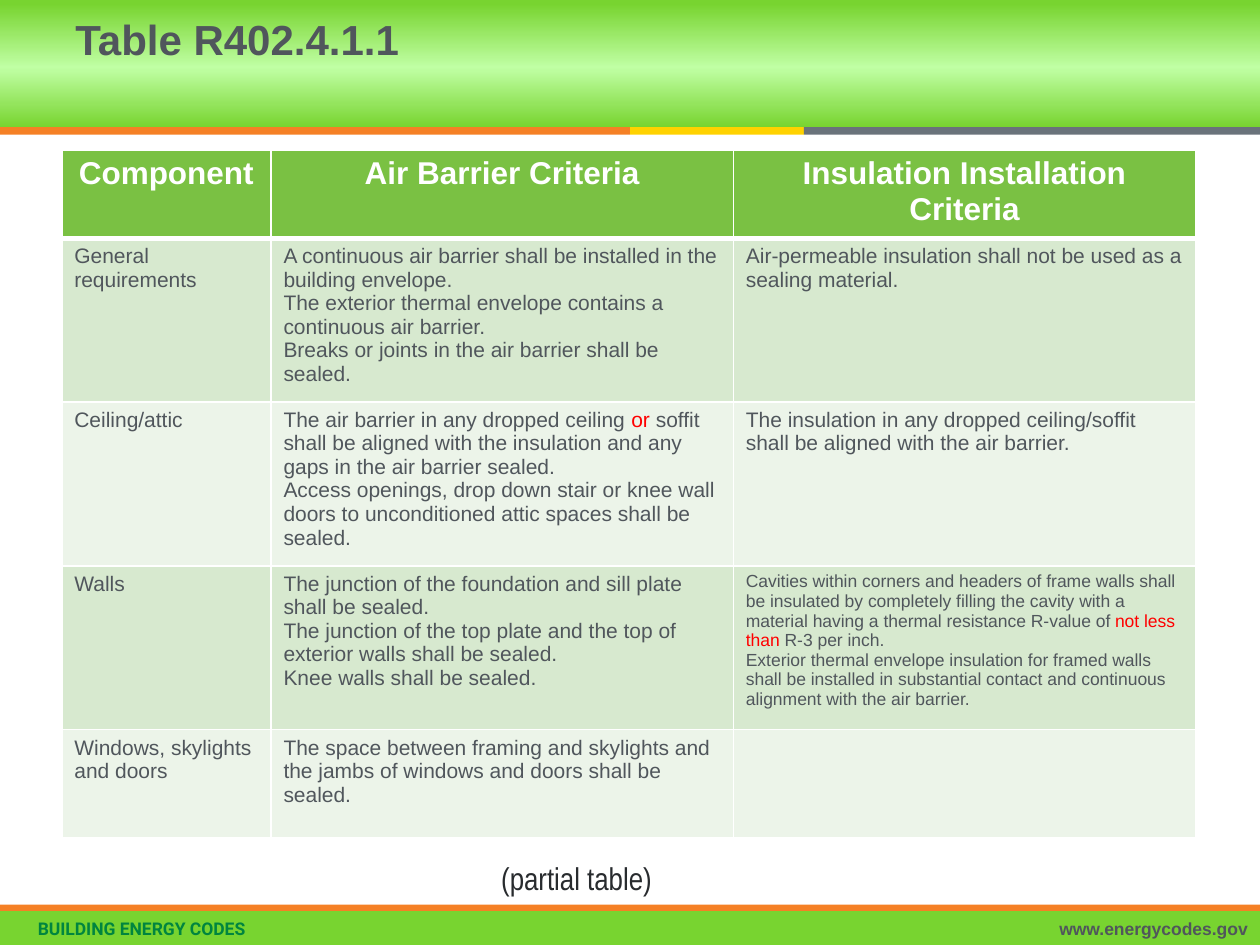
from lxml import etree
from pptx import Presentation
from pptx.dml.color import RGBColor
from pptx.enum.shapes import MSO_SHAPE
from pptx.enum.text import MSO_ANCHOR, PP_ALIGN
from pptx.oxml import parse_xml
from pptx.util import Inches, Pt

RECT = MSO_SHAPE.RECTANGLE
MIDDLE, TOP = MSO_ANCHOR.MIDDLE, MSO_ANCHOR.TOP
LEFT, CENTER, RIGHT = PP_ALIGN.LEFT, PP_ALIGN.CENTER, PP_ALIGN.RIGHT
NS = "http://schemas.openxmlformats.org/drawingml/2006/main"

COLORS = {
    "green": "78D430", "light_green": "C0FFA4", "orange": "F58025",
    "yellow": "FFD200", "gray": "6A737B", "text": "50565C",
    "brand": "00853F", "note": "282B2E", "red": "FF0000", "white": "FFFFFF",
    "header": "7AC143", "band": "D7E9CF", "pale": "ECF4E9",
}

# Each cell is a list of paragraphs; a paragraph is a list of (text, color) spans.
def plain(*lines):
    return [[(line, "text")] for line in lines]


HEADINGS = ["Component", "Air Barrier Criteria", "Insulation Installation Criteria"]
ROWS = [
    [plain("General requirements"),
     plain("A continuous air barrier shall be installed in the building envelope.",
           "The exterior thermal envelope contains a continuous air barrier.",
           "Breaks or joints in the air barrier shall be sealed."),
     plain("Air-permeable insulation shall not be used as a sealing material.")],
    [plain("Ceiling/attic"),
     [[("The air barrier in any dropped ceiling ", "text"), ("or ", "red"),
       ("soffit shall be aligned with the insulation and any gaps in the air "
        "barrier sealed.", "text")]]
     + plain("Access openings, drop down stair or knee wall doors to "
             "unconditioned attic spaces shall be sealed."),
     plain("The insulation in any dropped ceiling/soffit shall be aligned with "
           "the air barrier.")],
    [plain("Walls"),
     plain("The junction of the foundation and sill plate shall be sealed.",
           "The junction of the top plate and the top of exterior walls shall be sealed.",
           "Knee walls shall be sealed."),
     [[("Cavities within corners and headers of frame walls shall be insulated "
        "by completely filling the cavity with a material having a thermal "
        "resistance R-value of ", "text"), ("not less than", "red"),
       (" R-3 per inch.", "text")]]
     + plain("Exterior thermal envelope insulation for framed walls shall be "
             "installed in substantial contact and continuous alignment with "
             "the air barrier.")],
    [plain("Windows, skylights and doors"),
     plain("The space between framing and skylights and the jambs of windows "
           "and doors shall be sealed."),
     []],
]
COLUMN_WIDTHS = [1.66, 3.67, 3.67]
ROW_HEIGHTS = [0.7, 1.3, 1.3, 1.3, 0.86]
SMALL_CELL = (3, 2)


def rgb(name):
    return RGBColor.from_string(COLORS[name])


def add_span(para, text, size, color, font="Arial", bold=False):
    span = para.add_run()
    span.text = text
    span.font.size = Pt(size)
    span.font.name = font
    span.font.bold = bold
    span.font.color.rgb = rgb(color)


def add_bar(page, left, top, width, height, color):
    bar = page.shapes.add_shape(RECT, Inches(left), Inches(top),
                                Inches(width), Inches(height))
    bar.shadow.inherit = False
    bar.fill.solid()
    bar.fill.fore_color.rgb = rgb(color)
    bar.line.fill.background()
    return bar


def add_gradient(bar, stops):
    """Replace the solid fill with a top-to-bottom gradient."""
    stop_xml = "".join(
        f'<a:gs pos="{percent * 1000}"><a:srgbClr val="{COLORS[name]}"/></a:gs>'
        for percent, name in stops)
    gradient = parse_xml(f'<a:gradFill xmlns:a="{NS}" rotWithShape="1"><a:gsLst>{stop_xml}'
                         '</a:gsLst><a:lin ang="5400000" scaled="0"/></a:gradFill>')
    properties = bar.element.spPr
    properties.replace(properties.find(f"{{{NS}}}solidFill"), gradient)


def add_label(page, left, top, width, height, text, size, color, font="Arial",
              bold=False, align=LEFT, anchor=MIDDLE):
    box = page.shapes.add_textbox(Inches(left), Inches(top),
                                  Inches(width), Inches(height))
    frame = box.text_frame
    frame.word_wrap = True
    frame.vertical_anchor = anchor
    frame.paragraphs[0].alignment = align
    add_span(frame.paragraphs[0], text, size, color, font, bold)
    return frame


def set_borders(cell, top, bottom):
    """Draw white borders; top and bottom are widths in points."""
    properties = cell._tc.get_or_add_tcPr()
    sides = [("lnL", 1), ("lnR", 1), ("lnT", top), ("lnB", bottom)]
    for position, (side, width) in enumerate(sides):
        line = etree.Element(f"{{{NS}}}{side}", w=str(Pt(width)))
        fill = etree.SubElement(line, f"{{{NS}}}solidFill")
        etree.SubElement(fill, f"{{{NS}}}srgbClr", val=COLORS["white"])
        properties.insert(position, line)


def fill_cell(cell, paragraphs, fill, size, bold=False, align=LEFT):
    cell.fill.solid()
    cell.fill.fore_color.rgb = rgb(fill)
    frame = cell.text_frame
    for index, spans in enumerate(paragraphs):
        para = frame.add_paragraph() if index else frame.paragraphs[0]
        para.alignment = align
        for text, color in spans:
            add_span(para, text, size, color, bold=bold)


def add_criteria_table(page):
    table = page.shapes.add_table(
        len(ROW_HEIGHTS), len(COLUMN_WIDTHS), Inches(0.49), Inches(1.19),
        Inches(sum(COLUMN_WIDTHS)), Inches(sum(ROW_HEIGHTS))).table
    for column, width in zip(table.columns, COLUMN_WIDTHS):
        column.width = Inches(width)
    for row, height in zip(table.rows, ROW_HEIGHTS):
        row.height = Inches(height)
    for col, heading in enumerate(HEADINGS):
        cell = table.cell(0, col)
        fill_cell(cell, [[(heading, "white")]], "header", 18, True, CENTER)
        set_borders(cell, 1, 3)
    for row, contents in enumerate(ROWS, start=1):
        for col, paragraphs in enumerate(contents):
            cell = table.cell(row, col)
            size = 10 if (row, col) == SMALL_CELL else 12
            fill_cell(cell, paragraphs, "band" if row % 2 else "pale", size)
            set_borders(cell, 3 if row == 1 else 1, 1)


def add_header(page):
    banner = add_bar(page, -0.03, 0, 10.03, 1.01, "green")
    add_gradient(banner, [(3, "green"), (53, "light_green"), (100, "green")])
    for left, width, color in [(0, 5, "orange"), (5, 1.38, "yellow"),
                               (6.38, 3.62, "gray")]:
        add_bar(page, left, 1.01, width, 0.06, color)
    title = add_label(page, 0.5, 0, 5.89, 1.01, "Table R402.4.1.1", 24, "text", bold=True)
    title.margin_bottom = Inches(0.44)
    title.paragraphs[0].line_spacing = Pt(28)


def add_footer(page):
    add_bar(page, 0, 7.23, 10, 0.27, "green")
    add_bar(page, 0, 7.18, 10, 0.05, "orange")
    program = add_label(page, 0.07, 7.24, 7.97, 0.26, "BUILDING ENERGY CODES",
                        10, "brand", "Roboto", True)
    program.margin_left = Inches(0.23)
    add_label(page, 5.99, 7.24, 4.01, 0.26, "www.energycodes.gov", 10, "text",
              bold=True, align=RIGHT)


def main():
    deck = Presentation()
    deck.slide_width, deck.slide_height = Inches(10), Inches(7.5)
    page = deck.slides.add_slide(deck.slide_layouts[6])
    add_header(page)
    add_footer(page)
    add_criteria_table(page)
    add_label(page, 3.88, 6.77, 3.34, 0.35, "(partial table)", 18, "note",
              "Arial Narrow", anchor=TOP)
    deck.save("out.pptx")


if __name__ == "__main__":
    main()
